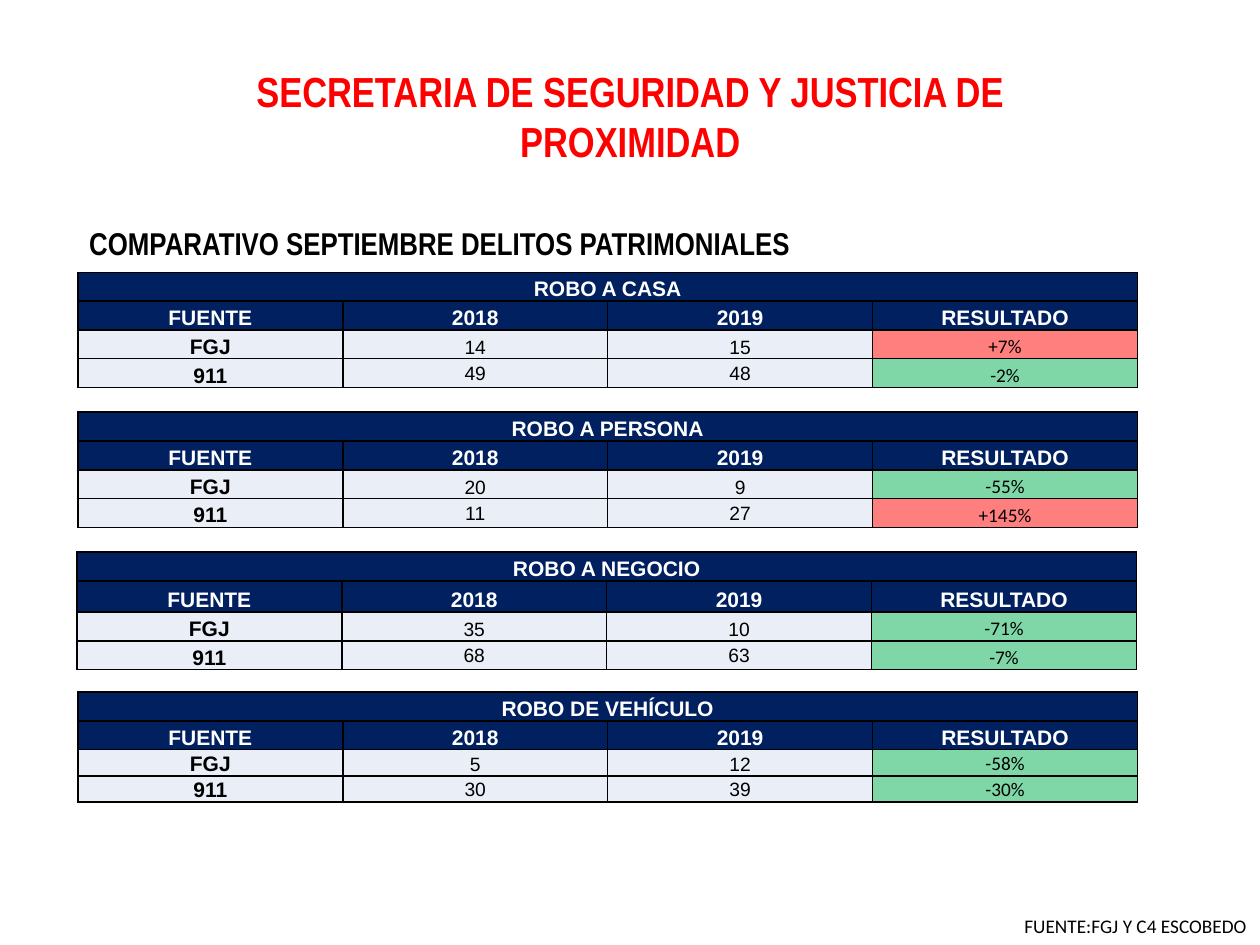
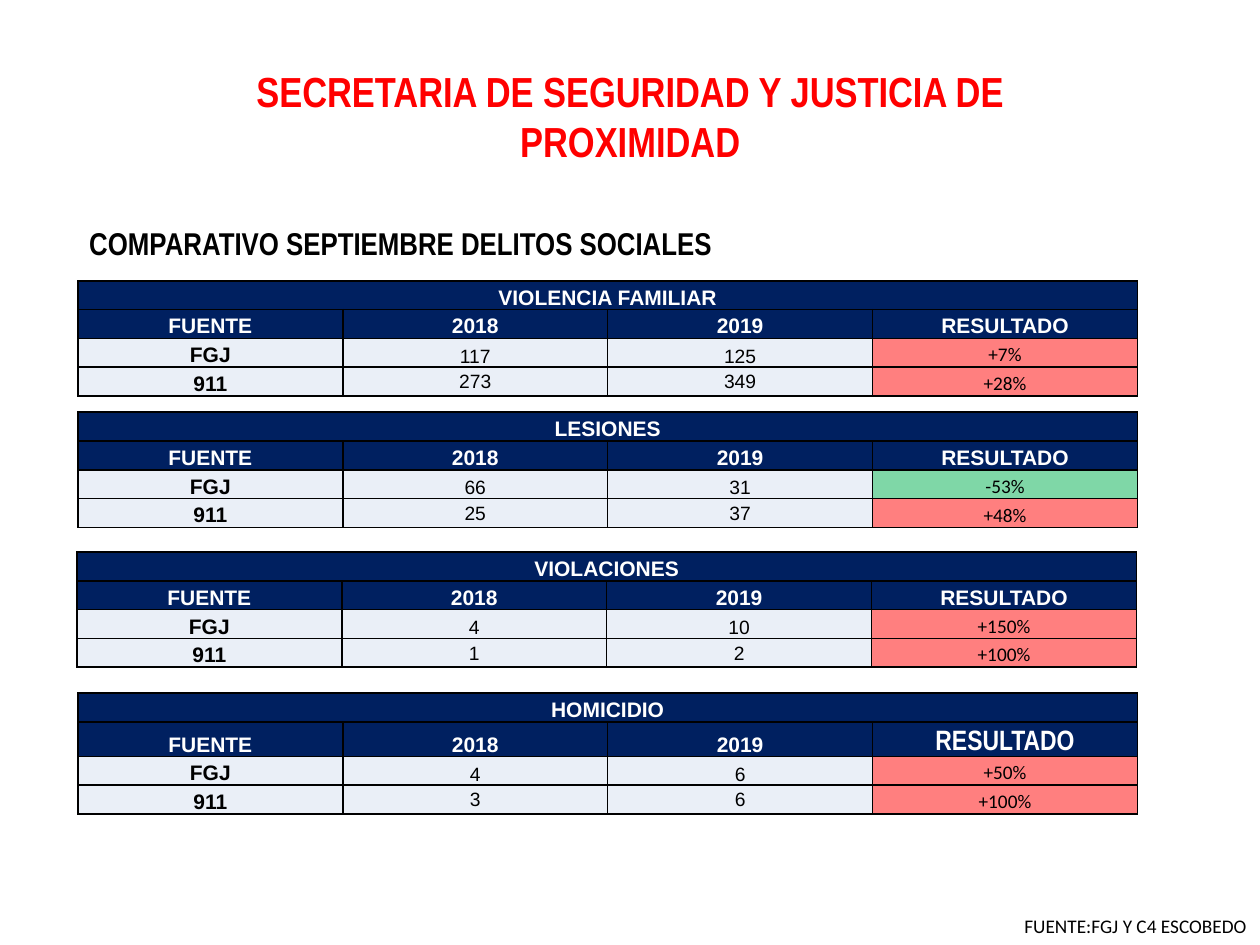
from lxml import etree
from pptx import Presentation
from pptx.dml.color import RGBColor
from pptx.enum.text import MSO_ANCHOR, MSO_AUTO_SIZE, PP_ALIGN
from pptx.oxml.ns import qn
from pptx.util import Cm, Pt

LEFT, CENTER = PP_ALIGN.LEFT, PP_ALIGN.CENTER
MIDDLE, BOTTOM = MSO_ANCHOR.MIDDLE, MSO_ANCHOR.BOTTOM
FIT = MSO_AUTO_SIZE.SHAPE_TO_FIT_TEXT

RED = RGBColor(0xFF, 0x00, 0x00)
GREEN = RGBColor(0x00, 0xB0, 0x50)
NAVY = RGBColor(0x00, 0x20, 0x60)
PALE = RGBColor(0xEA, 0xEF, 0xF7)
BLACK = RGBColor(0x00, 0x00, 0x00)
WHITE = RGBColor(0xFF, 0xFF, 0xFF)

TITLE = "SECRETARIA DE SEGURIDAD Y JUSTICIA DE PROXIMIDAD"
FOOTER = "FUENTE:FGJ Y C4 ESCOBEDO"
HEADINGS = ("FUENTE", "2018", "2019", "RESULTADO")

# Per table: crime, FGJ values, 911 values, layout differences in cm
SLIDES = [
    ("COMPARATIVO SEPTIEMBRE DELITOS PATRIMONIALES", [
        ("ROBO A CASA", ("14", "15", "+7%"), ("49", "48", "-2%"), {"top": 5.49}),
        ("ROBO A PERSONA", ("20", "9", "-55%"), ("11", "27", "+145%"), {}),
        ("ROBO A NEGOCIO", ("35", "10", "-71%"), ("68", "63", "-7%"),
         {"left": 1.55, "heading_h": 0.63}),
        ("ROBO DE VEHÍCULO", ("5", "12", "-58%"), ("30", "39", "-30%"),
         {"data_h": 0.53}),
    ]),
    ("COMPARATIVO SEPTIEMBRE DELITOS SOCIALES", [
        ("VIOLENCIA FAMILIAR", ("117", "125", "+7%"), ("273", "349", "+28%"),
         {"top": 5.66}),
        ("LESIONES", ("66", "31", "-53%"), ("25", "37", "+48%"), {}),
        ("VIOLACIONES", ("4", "10", "+150%"), ("1", "2", "+100%"), {"left": 1.55}),
        ("HOMICIDIO", ("4", "6", "+50%"), ("3", "6", "+100%"),
         {"top": 13.97, "heading_h": 0.7,
          "result_heading": {"font": "Arial Narrow", "size": 16}}),
    ]),
]

FIRST_TOP, TABLE_STEP = 5.49, 2.82
TABLE_LEFT, COL_W, ROW_H = 1.57, 5.34, 0.58


def write(tf, text, font="Arial", size=12, color=BLACK, bold=False, align=CENTER):
    p = tf.paragraphs[0]
    p.alignment = align
    r = p.add_run()
    r.text = text
    r.font.name, r.font.size, r.font.bold = font, Pt(size), bold
    r.font.color.rgb = color


def add_text(slide, box, text, wrap=True, **fmt):
    tf = slide.shapes.add_textbox(*map(Cm, box)).text_frame
    tf.word_wrap = wrap
    tf.auto_size = FIT
    write(tf, text, **fmt)


def style_cell(cell, fill, anchor=BOTTOM, alpha=None):
    """Set insets, thin black borders and a fill, optionally translucent."""
    cell.margin_left = cell.margin_right = cell.margin_top = Cm(0.02)
    cell.margin_bottom = 0
    cell.vertical_anchor = anchor
    tc_pr = cell._tc.get_or_add_tcPr()
    for side in ("lnL", "lnR", "lnT", "lnB"):
        ln = etree.SubElement(tc_pr, qn(f"a:{side}"), w=str(Pt(1)))
        solid = etree.SubElement(ln, qn("a:solidFill"))
        etree.SubElement(solid, qn("a:srgbClr"), val=str(BLACK))
    cell.fill.solid()
    cell.fill.fore_color.rgb = fill
    if alpha:
        color = tc_pr.find(qn("a:solidFill")).find(qn("a:srgbClr"))
        etree.SubElement(color, qn("a:alpha"), val=str(alpha * 1000))


def add_crime_table(slide, crime, fgj, calls, top, left=TABLE_LEFT,
                    heading_h=ROW_H, data_h=ROW_H, result_heading=None):
    heights = (ROW_H, heading_h, data_h, data_h)
    frame = slide.shapes.add_table(4, 4, Cm(left), Cm(top),
                                   Cm(4 * COL_W), Cm(sum(heights)))
    table = frame.table
    table.first_row = table.horz_banding = False
    for col in table.columns:
        col.width = Cm(COL_W)
    for row, height in zip(table.rows, heights):
        row.height = Cm(height)

    for c in range(4):
        style_cell(table.cell(0, c), NAVY)
    table.cell(0, 0).merge(table.cell(0, 3))
    write(table.cell(0, 0).text_frame, crime, color=WHITE, bold=True)

    for c, heading in enumerate(HEADINGS):
        cell = table.cell(1, c)
        style_cell(cell, NAVY)
        special = result_heading if heading == "RESULTADO" else None
        write(cell.text_frame, heading, color=WHITE, bold=True, **(special or {}))

    rows = (("FGJ", fgj, BOTTOM), ("911", calls, MIDDLE))
    for r, (source, (before, after, result), anchor) in enumerate(rows, start=2):
        cell = table.cell(r, 0)
        style_cell(cell, PALE)
        write(cell.text_frame, source, bold=True)
        for c, value in enumerate((before, after), start=1):
            cell = table.cell(r, c)
            style_cell(cell, PALE, anchor)
            write(cell.text_frame, value, size=11)
        cell = table.cell(r, 3)
        style_cell(cell, RED if result.startswith("+") else GREEN, alpha=50)
        write(cell.text_frame, result, font="Calibri", size=11)


def main():
    prs = Presentation()
    prs.slide_width, prs.slide_height = Cm(25.4), Cm(19.05)
    for subtitle, tables in SLIDES:
        s = prs.slides.add_slide(prs.slide_layouts[6])
        add_text(s, (4.83, 1.19, 15.75, 2.31), TITLE, font="Arial Narrow",
                 size=24, color=RED, bold=True)
        add_text(s, (1.55, 4.39, 18.75, 1.02), subtitle, font="Arial Narrow",
                 size=18, bold=True, align=LEFT)
        for i, (crime, fgj, calls, layout) in enumerate(tables):
            place = {"top": FIRST_TOP + i * TABLE_STEP, **layout}
            add_crime_table(s, crime, fgj, calls, **place)
        add_text(s, (20.4, 18.31, 5.03, 0.74), FOOTER, wrap=False,
                 font="Calibri", size=11, align=LEFT)
    prs.save("out.pptx")


if __name__ == "__main__":
    main()
